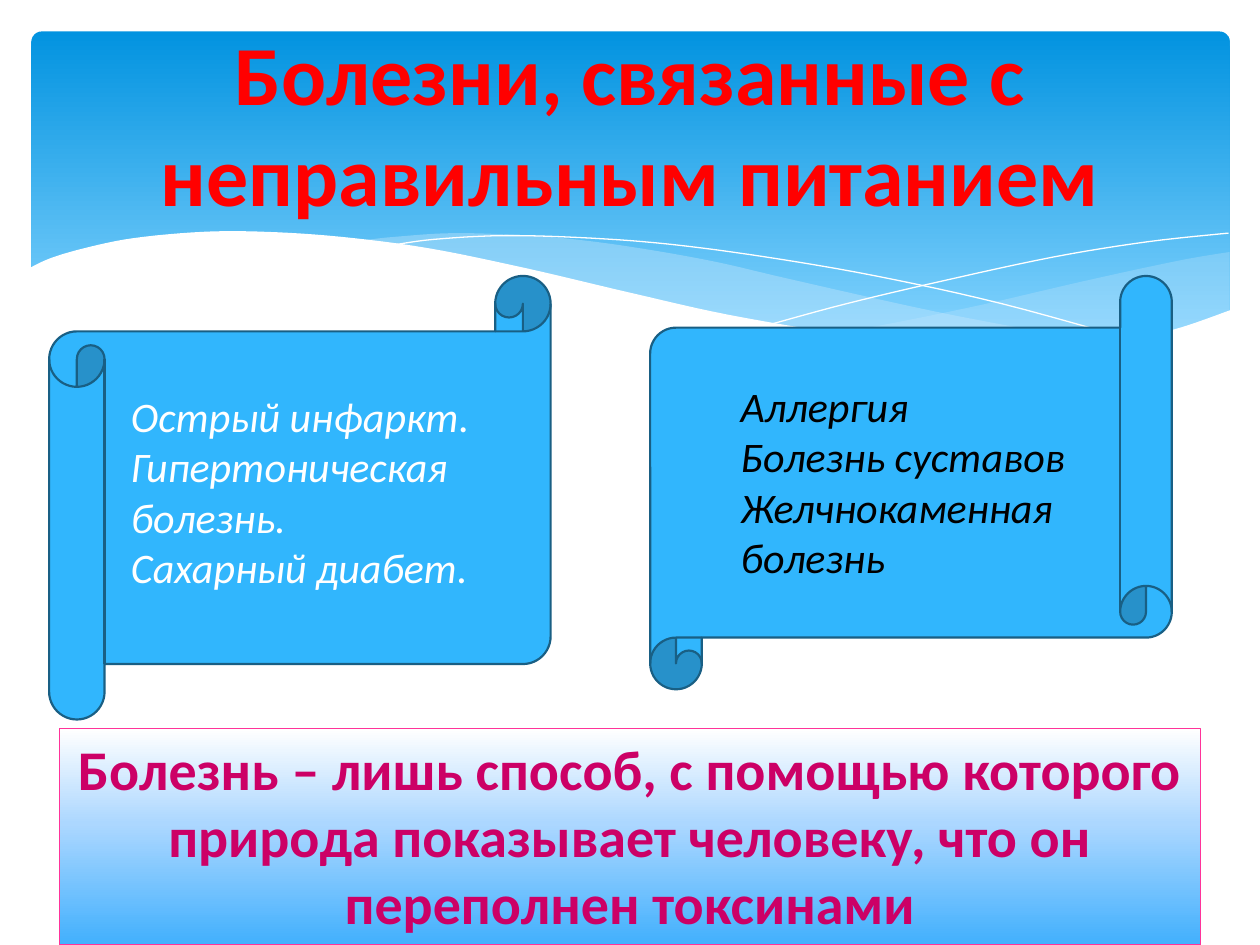
import copy

import lxml.etree
import pptx
import pptx.dml.color
import pptx.enum.shapes
import pptx.enum.text
import pptx.oxml.ns
import pptx.util
from pptx.util import Inches

SHAPE = pptx.enum.shapes.MSO_SHAPE
ALIGN = pptx.enum.text.PP_ALIGN
ANCHOR = pptx.enum.text.MSO_ANCHOR

COLORS = {
    "white": "FFFFFF", "black": "000000", "red": "FF0000", "crimson": "CC0066",
    "pink": "FF3399", "scroll": "31B6FD", "scroll_edge": "195F84",
    "wave": "C6E7FC", "sky_top": "0293E0", "sky_low": "83D3FE",
    "note_mid": "ACD7FF", "note_low": "42B0FD",
}
FORMATS = {
    "title": {"size": pptx.util.Pt(48), "bold": True, "name": "Calibri"},
    "note": {"size": pptx.util.Pt(32), "bold": True, "name": "Calibri"},
    "list": {"size": pptx.util.Pt(24), "italic": True, "name": "Calibri"},
}
SKY_STOPS = [(0, "sky_top"), (0.9, "sky_low")]
NOTE_STOPS = [(0, "white"), (0.44, "note_mid"), (1, "note_low")]

RIGHT_WAVE_TOP = [(9.76, 2), (9.35, 2.07), (8.61, 2.23), (7.79, 2.42), (7.06, 2.57), (6.61, 2.65)]
RIGHT_WAVE_LOW = [(6.61, 2.65), (7.05, 2.71), (7.57, 2.76), (8.14, 2.78), (8.72, 2.74),
                  (9.21, 2.65), (9.49, 2.57), (9.76, 2.47)]
MID_WAVE_TOP = [(8.93, 2.73), (8.37, 2.65), (7.41, 2.47), (6.29, 2.22), (5.69, 2.08), (5.14, 1.98),
                (4.65, 1.91), (4.2, 1.87), (3.61, 1.85), (3.13, 1.88), (2.86, 1.91)]
MID_WAVE_LOW = [(2.86, 1.91), (3.42, 1.99), (4.04, 2.11), (4.91, 2.32), (5.66, 2.48), (6.34, 2.61),
                (6.95, 2.7), (7.48, 2.76), (8.07, 2.78), (8.57, 2.77), (8.93, 2.73)]
FALLING_LINE = [(3.09, 1.95), (3.44, 1.9), (4.01, 1.87), (4.69, 1.89), (5.33, 1.94), (6.08, 2.04),
                (6.95, 2.19), (7.95, 2.41), (9.07, 2.72)]
RISING_LINE = [(6.13, 2.57), (6.72, 2.41), (7.48, 2.23), (8.36, 2.04), (9.1, 1.92), (9.75, 1.85)]
PAGE_EDGE = [(9.77, 2.46), (9.3, 2.62), (8.75, 2.73), (8.09, 2.77), (7.44, 2.74), (6.68, 2.65),
             (5.79, 2.5), (5.03, 2.33), (4.18, 2.13), (3.4, 1.97), (2.71, 1.88), (2.11, 1.84),
             (1.61, 1.84), (1.06, 1.89), (0.67, 1.97), (0.4, 2.05), (0.23, 2.13)]
PAGE_CORNERS = [(0.23, 3.29), (9.77, 3.29)]

NOTE_TEXT = ("Болезнь – лишь способ, с помощью которого природа показывает человеку, "
             "что он переполнен токсинами")
SCROLLS = [
    {"box": (0.39, 2.19, 3.98, 3.52), "rotation": 0,
     "text_box": (0.94, 3.05, 3.05, 2.52), "color": "white",
     "lines": ["Острый инфаркт.", "Гипертоническая болезнь.", "Сахарный диабет."]},
    {"box": (5.16, 2.19, 4.14, 3.28), "rotation": 180,
     "text_box": (5.78, 2.97, 3.05, 1.72), "color": "black",
     "lines": ["Аллергия", "Болезнь суставов", "Желчнокаменная болезнь"]},
]


def rgb(name):
    """Return the named colour."""
    return pptx.dml.color.RGBColor.from_string(COLORS[name])


def blend(before, start, end, after, t):
    """Return the Catmull-Rom value at t between start and end."""
    slope = end - before
    bend = 2 * before - 5 * start + 4 * end - after
    twist = 3 * (start - end) + after - before
    return start + (slope * t + bend * t ** 2 + twist * t ** 3) / 2


def curve(points, steps=6):
    """Return a smooth path through the points."""
    padded = [points[0], *points, points[-1]]
    path = [points[0]]
    for four in zip(padded, padded[1:], padded[2:], padded[3:]):
        xs, ys = zip(*four)
        for i in range(1, steps + 1):
            path.append((blend(*xs, i / steps), blend(*ys, i / steps)))
    return path


def style(sp, fill=None, line=None, width=0):
    """Set solid fill and outline, without shadow."""
    sp.shadow.inherit = False
    if fill:
        sp.fill.solid()
        sp.fill.fore_color.rgb = rgb(fill)
    else:
        sp.fill.background()
    if line:
        sp.line.color.rgb = rgb(line)
        sp.line.width = pptx.util.Pt(width)
    else:
        sp.line.fill.background()


def set_opacity(sp, percent):
    """Make the solid fill translucent."""
    color = sp._element.spPr.find(pptx.oxml.ns.qn("a:solidFill"))[0]
    lxml.etree.SubElement(color, pptx.oxml.ns.qn("a:alpha"), val=str(percent * 1000))


def set_gradient(sp, stops):
    """Fill from top to bottom with (position, colour) stops."""
    sp.fill.gradient()
    sp.fill.gradient_angle = 270
    stop_list = next(sp._element.iter(pptx.oxml.ns.qn("a:gsLst")))
    for _ in stops[2:]:
        stop_list.append(copy.deepcopy(stop_list[-1]))
    for stop, (position, color) in zip(sp.fill.gradient_stops, stops):
        stop.position = position
        stop.color.rgb = rgb(color)


def add_shape(s, kind, box, **look):
    """Add a preset shape."""
    sp = s.shapes.add_shape(kind, *map(Inches, box))
    style(sp, **look)
    return sp


def add_path(s, points, closed=True, **look):
    """Add a freeform through the points."""
    start, *rest = [(Inches(x), Inches(y)) for x, y in points]
    builder = s.shapes.build_freeform(*start)
    builder.add_line_segments(rest, close=closed)
    sp = builder.convert_to_shape()
    style(sp, **look)
    return sp


def write(sp, lines, kind, color, align=ALIGN.LEFT, anchor=ANCHOR.TOP):
    """Write one paragraph for each line."""
    tf = sp.text_frame
    frame = {"word_wrap": True, "vertical_anchor": anchor,
             "auto_size": pptx.enum.text.MSO_AUTO_SIZE.NONE}
    for key, value in frame.items():
        setattr(tf, key, value)
    for i, line in enumerate(lines):
        p = tf.add_paragraph() if i else tf.paragraphs[0]
        p.alignment = align
        r = p.add_run()
        r.text = line
        for key, value in FORMATS[kind].items():
            setattr(r.font, key, value)
        r.font.color.rgb = rgb(color)


def add_backdrop(s):
    """Draw the blue sky, its waves and the white page edge."""
    sky = add_shape(s, SHAPE.ROUNDED_RECTANGLE, (0.25, 0.25, 9.51, 2.7))
    sky.adjustments[0] = 0.03
    set_gradient(sky, SKY_STOPS)
    for top, low, opacity in ((RIGHT_WAVE_TOP, RIGHT_WAVE_LOW, 29),
                              (MID_WAVE_TOP, MID_WAVE_LOW, 40)):
        set_opacity(add_path(s, curve(top) + curve(low), fill="wave"), opacity)
    for points in (FALLING_LINE, RISING_LINE):
        add_path(s, curve(points), closed=False, line="white")
    add_path(s, curve(PAGE_EDGE) + PAGE_CORNERS, fill="white")


def add_title(s, text, box):
    """Place the title above the backdrop."""
    sp = s.shapes.title
    sp.left, sp.top, sp.width, sp.height = map(Inches, box)
    s.shapes._spTree.append(sp._element)
    write(sp, [text], "title", "red", ALIGN.CENTER, ANCHOR.MIDDLE)


def add_note(s, text, box):
    """Add the framed closing statement."""
    sp = add_shape(s, SHAPE.RECTANGLE, box, line="pink", width=0.75)
    set_gradient(sp, NOTE_STOPS)
    write(sp, [text], "note", "crimson", ALIGN.CENTER)


def add_scroll(s, box, rotation, text_box, lines, color):
    """Add a scroll with its list of diseases."""
    sp = add_shape(s, SHAPE.HORIZONTAL_SCROLL, box, fill="scroll", line="scroll_edge", width=1.25)
    sp.rotation = rotation
    write(s.shapes.add_textbox(*map(Inches, text_box)), lines, "list", color)


def main():
    """Build the slide."""
    prs = pptx.Presentation()
    prs.slide_width, prs.slide_height = Inches(10), Inches(7.5)
    s = prs.slides.add_slide(prs.slide_layouts.get_by_name("Title Only"))
    add_backdrop(s)
    add_title(s, "Болезни, связанные с неправильным питанием", (0.5, 0.39, 9, 1.16))
    add_note(s, NOTE_TEXT, (0.47, 5.78, 9.06, 1.72))
    for scroll in SCROLLS:
        add_scroll(s, **scroll)
    prs.save("out.pptx")


if __name__ == "__main__":
    main()
